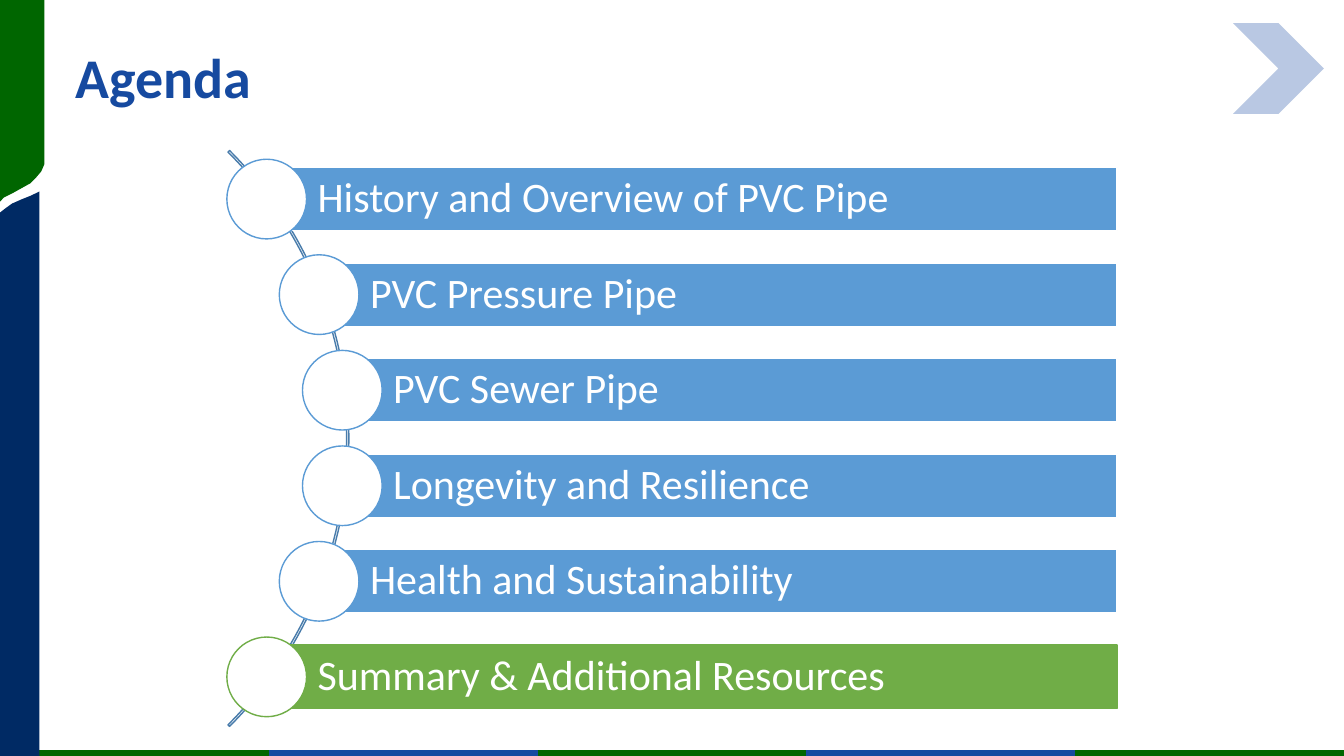
from pptx import Presentation
from pptx import util as u
from pptx.dml import color as c
from pptx.enum import shapes as s, text as t
from lxml import etree

inch = u.Inches
hues = {"green": "006600", "blue": "164AA0", "navy": "002A64", "arc": "497CAB",
        "bar": "5B9BD5", "last": "70AD47", "mark": "B9C8E3", "white": "FFFFFF"}


def paint(shape, fill, line=None):
    shape.shadow.inherit = False
    if fill:
        shape.fill.solid()
        shape.fill.fore_color.rgb = c.RGBColor.from_string(hues[fill])
    else:
        shape.fill.background()
    if line:
        shape.line.color.rgb = c.RGBColor.from_string(hues[line])
        shape.line.width = u.Pt(1)
    else:
        shape.line.fill.background()


def write(shape, words, hue, look):
    frame = shape.text_frame
    frame.word_wrap = True
    frame.vertical_anchor = t.MSO_ANCHOR.MIDDLE
    para = frame.paragraphs[0]
    para.text = words
    para.alignment = t.PP_ALIGN.LEFT
    para.line_spacing = 0.9
    font = para.runs[0].font
    for key, val in look.items():
        setattr(font, key, val)
    font.color.rgb = c.RGBColor.from_string(hues[hue])


deck = Presentation()
deck.slide_width, deck.slide_height = inch(13.33), inch(7.5)
slide = deck.slides.add_slide(deck.slide_layouts[5])
items = slide.shapes

# Title
title = items.title
place = {"left": 0.65, "top": 0.14, "width": 11.56, "height": 1.31}
for key, val in place.items():
    setattr(title, key, inch(val))
write(title, "Agenda", "blue", {"name": "Calibri", "size": u.Pt(40), "bold": True})

# Footer stripe in alternating colours
step = 13.33 / 5
for i in range(5):
    line = items.add_connector(s.MSO_CONNECTOR.STRAIGHT, inch(i * step), inch(7.47),
                               inch((i + 1) * step), inch(7.47))
    line.line.color.rgb = c.RGBColor.from_string(hues[("green", "blue")[i % 2]])
    line.line.width = u.Pt(3.75)
    props = line.element.spPr
    etree.SubElement(props, "{http://schemas.openxmlformats.org/drawingml/2006/main}effectLst")

# Curved side bands
bands = [
    ("green", [(0.44, 1.6), (0.44, 0), (0, 0), (0, 2), (0.04, 1.96), (0.12, 1.92),
               (0.21, 1.87), (0.3, 1.82), (0.36, 1.76), (0.41, 1.7), (0.44, 1.63)]),
    ("navy", [(0.39, 7.5), (0.39, 1.9), (0.31, 1.94), (0.21, 1.98), (0.12, 2.02),
              (0.05, 2.07), (0, 2.11), (0, 7.5)]),
]
for hue, dots in bands:
    path = [(inch(x), inch(y)) for x, y in dots]
    build = items.build_freeform(*path[0])
    build.add_line_segments(path[1:], close=True)
    paint(build.convert_to_shape(), hue)

# Corner mark
mark = items.add_shape(s.MSO_SHAPE.CHEVRON, inch(12.23), inch(0.23), inch(0.9), inch(0.9))
paint(mark, "mark")

# Thin arc behind the agenda rows
arc = items.add_shape(s.MSO_SHAPE.BLOCK_ARC, inch(-4.62), inch(0.31), inch(8.08), inch(8.08))
for i, val in enumerate((189, 27, 0.0027)):
    arc.adjustments[i] = val
paint(arc, None, "arc")

# Agenda rows: a bar and a circle that follow the arc
rows = [("History and Overview of PVC Pipe", 2.65), ("PVC Pressure Pipe", 3.17),
        ("PVC Sewer Pipe", 3.4), ("Longevity and Resilience", 3.4),
        ("Health and Sustainability", 3.17), ("Summary & Additional Resources", 2.65)]
right, pitch = 11.08, 0.948
inset = {"margin_left": 0.5, "margin_top": 0.08, "margin_right": 0.08, "margin_bottom": 0.08}
for i, (words, left) in enumerate(rows):
    end = i == len(rows) - 1
    hue = "last" if end else "bar"
    top = 1.66 + i * pitch
    bar = items.add_shape(s.MSO_SHAPE.RECTANGLE, inch(left), inch(top),
                          inch(right - left), inch(0.63))
    paint(bar, hue, "last" if end else "white")
    for key, val in inset.items():
        setattr(bar.text_frame, key, inch(val))
    write(bar, words, "white", {"name": "Calibri", "size": u.Pt(30)})
    disc = items.add_shape(s.MSO_SHAPE.OVAL, inch(left - 0.4), inch(top - 0.08),
                           inch(0.79), inch(0.79))
    paint(disc, "white", hue)

deck.save("out.pptx")
